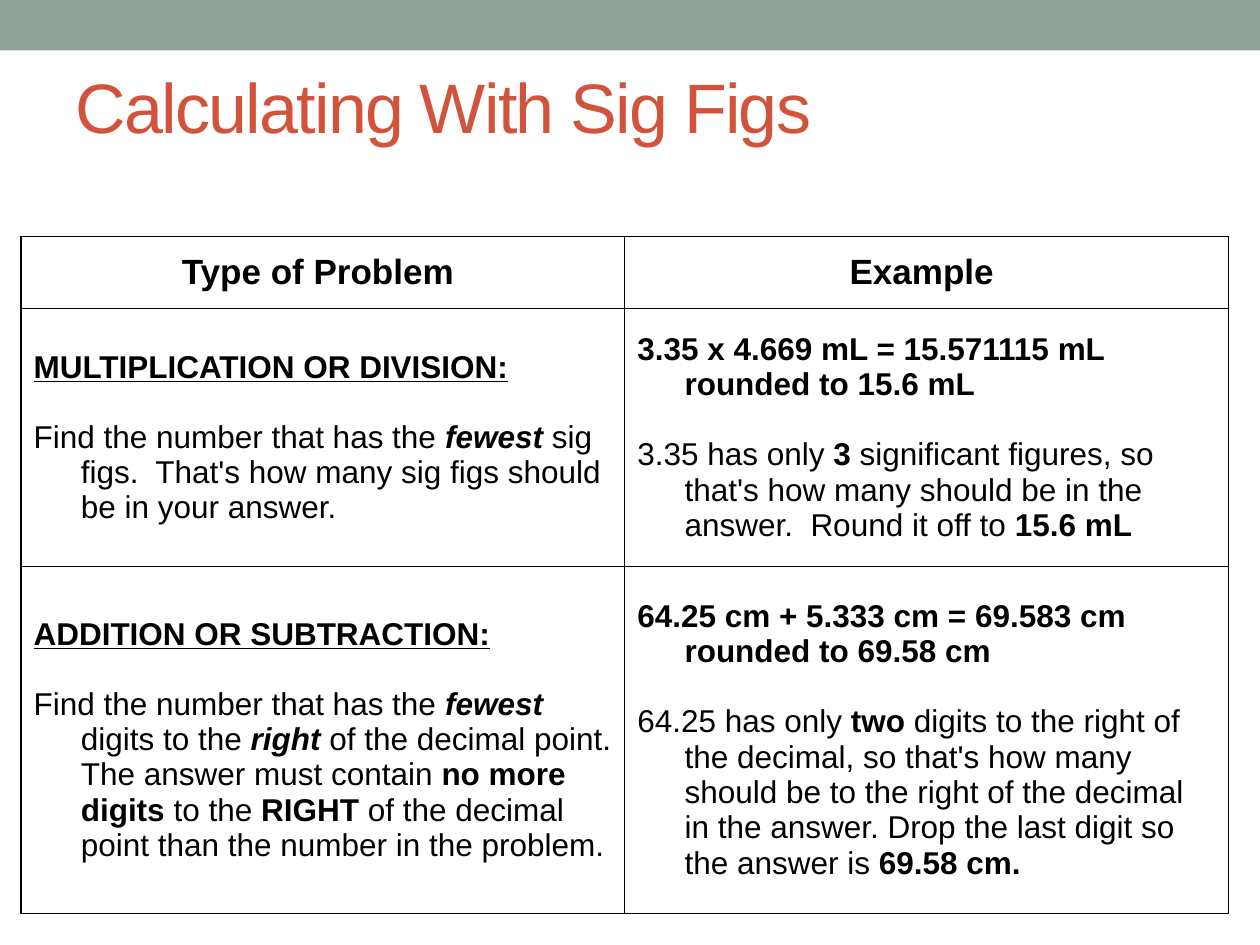
from lxml import etree
from pptx import Presentation
from pptx.dml.color import RGBColor
from pptx.enum.shapes import MSO_SHAPE
from pptx.enum.text import MSO_ANCHOR, PP_ALIGN
from pptx.oxml.ns import qn
from pptx.util import Pt

RECT = MSO_SHAPE.RECTANGLE
MIDDLE = MSO_ANCHOR.MIDDLE
LEFT, CENTER = PP_ALIGN.LEFT, PP_ALIGN.CENTER
SAGE = RGBColor(0x93, 0xA2, 0x99)
RED = RGBColor(0xD2, 0x53, 0x3C)
BLACK = RGBColor(0, 0, 0)

STYLES = {
    "plain": {},
    "bold": {"bold": True},
    "stress": {"bold": True, "italic": True},
    "under": {"bold": True, "underline": True},
}

ROWS = [
    [
        [[("Type of Problem ", "bold")]],
        [[("Example ", "bold")]],
    ],
    [
        [
            [("MULTIPLICATION OR DIVISION:", "under")],
            [("Find the number that has the ", "plain"), ("fewest", "stress"),
             (" sig figs.  That's how many sig figs should be in your answer.", "plain")],
        ],
        [
            [("3.35 x 4.669 mL = 15.571115 mL\nrounded to 15.6 mL", "bold")],
            [("3.35 has only ", "plain"), ("3", "bold"),
             (" significant figures, so that's how many should be in the answer.  "
              "Round it off to ", "plain"),
             ("15.6 mL", "bold")],
        ],
    ],
    [
        [
            [("ADDITION OR SUBTRACTION:", "under")],
            [("Find the number that has the ", "plain"), ("fewest ", "stress"),
             ("digits to the ", "plain"), ("right", "stress"),
             (" of the decimal point. The answer must contain ", "plain"),
             ("no more digits", "bold"), (" to the ", "plain"), ("RIGHT", "bold"),
             (" of the decimal point than the number in the problem.", "plain")],
        ],
        [
            [("64.25 cm + 5.333 cm = 69.583 cm \nrounded to 69.58 cm", "bold")],
            [("64.25 has only ", "plain"), ("two", "bold"),
             (" digits to the right of the decimal, so that's how many should be to the "
              "right of the decimal in the answer. Drop the last digit so the answer is ",
              "plain"),
             ("69.58 cm.", "bold")],
        ],
    ],
]


def add_run(para, text, size, color, style):
    run = para.add_run()
    run.text = text
    run.font.color.rgb = color
    format = {"name": "Arial", "size": Pt(size), **STYLES[style]}
    for key, value in format.items():
        setattr(run.font, key, value)
    return run


def add_edges(cell):
    props = cell._tc.get_or_add_tcPr()
    for index, side in enumerate(("lnL", "lnR", "lnT", "lnB")):
        line = etree.Element(qn(f"a:{side}"), w=str(Pt(0.75)))
        fill = etree.SubElement(line, qn("a:solidFill"))
        etree.SubElement(fill, qn("a:srgbClr"), val=str(BLACK))
        props.insert(index, line)


deck = Presentation()
deck.slide_width, deck.slide_height = Pt(720), Pt(540)
slide = deck.slides.add_slide(deck.slide_layouts[6])
shapes = slide.shapes

band = shapes.add_shape(RECT, 0, 0, Pt(720), Pt(28.8))
band.shadow.inherit = False
band.fill.solid()
band.fill.fore_color.rgb = SAGE
band.line.fill.background()

title = shapes.add_textbox(Pt(36), Pt(9.5), Pt(594), Pt(102)).text_frame
title.word_wrap = True
title.vertical_anchor = MIDDLE
run = add_run(title.paragraphs[0], "Calculating With Sig Figs", 40, RED, "plain")
run.font._element.set("spc", "-100")

table = shapes.add_table(3, 2, Pt(12), Pt(135), Pt(690), Pt(387)).table
for col in table.columns:
    col.width = Pt(345)
for row, height in zip(table.rows, (41.5, 147, 198.5)):
    row.height = Pt(height)

for r, row in enumerate(ROWS):
    size, align = (18, LEFT) if r else (20, CENTER)
    for c, paras in enumerate(row):
        cell = table.cell(r, c)
        cell.vertical_anchor = MIDDLE
        cell.fill.background()
        add_edges(cell)
        frame = cell.text_frame
        for n, runs in enumerate(paras):
            para = frame.add_paragraph() if n else frame.paragraphs[0]
            para.alignment = align
            para.space_before = Pt(20 * n)
            indent = para._p.get_or_add_pPr()
            indent.set("marL", str(Pt(27)))
            indent.set("indent", str(Pt(-27)))
            for text, style in runs:
                for k, part in enumerate(text.split("\n")):
                    if k:
                        para.add_line_break()
                    add_run(para, part, size, BLACK, style)

deck.save("out.pptx")
